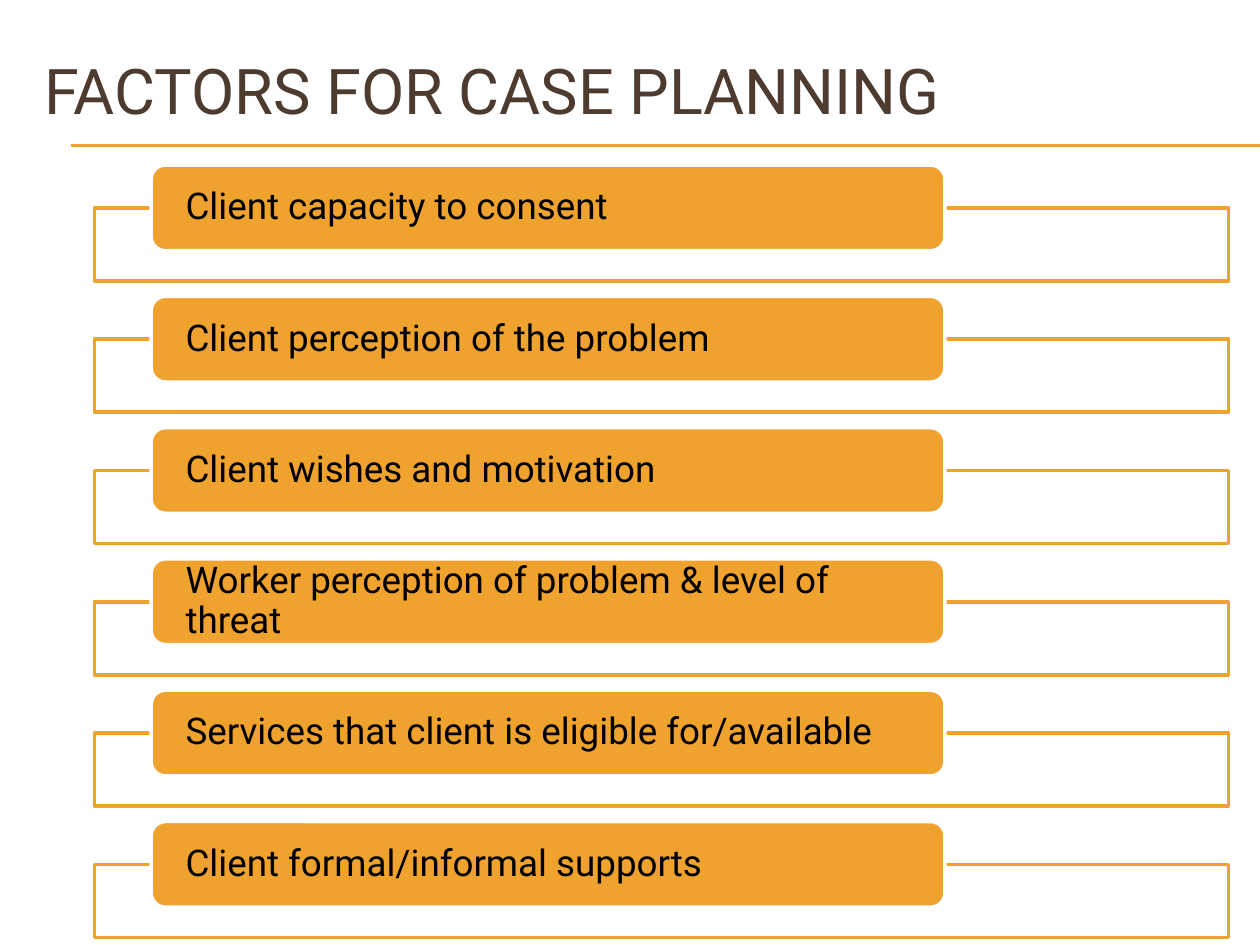
from dataclasses import dataclass

from lxml import etree
from pptx import Presentation
from pptx import util as u
from pptx.dml.color import RGBColor
from pptx.enum import shapes, text
from pptx.oxml import ns


@dataclass(frozen=True)
class Theme:
    """Hold the colours, font and type sizes."""
    accent: str = "F0A22E"
    paper: str = "FFFFFF"
    ink: str = "000000"
    heading: str = "4E3B30"
    font: str = "Roboto"
    title_size: int = 36
    label_size: int = 21


def write_text(frame, content, *, font, size, color, anchor, margins, line_spacing=1.0):
    """Fill a text frame with one left-aligned, formatted paragraph."""
    frame.word_wrap = True
    frame.auto_size = text.MSO_AUTO_SIZE.NONE
    frame.vertical_anchor = anchor
    frame.margin_left = frame.margin_right = u.Inches(margins[0])
    frame.margin_top = frame.margin_bottom = u.Inches(margins[1])
    paragraph = frame.paragraphs[0]
    paragraph.alignment = text.PP_ALIGN.LEFT
    paragraph.line_spacing = line_spacing
    run = paragraph.add_run()
    run.text = content
    run.font.name = font
    run.font.size = u.Pt(size)
    run.font.color.rgb = RGBColor.from_string(color)


class SlideBuilder:
    """Draw styled elements on the current slide."""

    def __init__(self, slide, theme):
        """Keep the slide and its theme."""
        self.slide = slide
        self.theme = theme

    def title(self, content, left, top, width, height):
        """Place and fill the title placeholder."""
        shape = self.slide.shapes.title
        shape.left, shape.top = u.Inches(left), u.Inches(top)
        shape.width, shape.height = u.Inches(width), u.Inches(height)
        write_text(shape.text_frame, content, font=self.theme.font,
                   size=self.theme.title_size, color=self.theme.heading,
                   anchor=text.MSO_ANCHOR.TOP, margins=(0.1, 0.08))

    def rule(self, left, right, y):
        """Draw a thin horizontal line."""
        line = self.slide.shapes.add_connector(
            shapes.MSO_CONNECTOR.STRAIGHT,
            u.Inches(left), u.Inches(y), u.Inches(right), u.Inches(y))
        line.line.color.rgb = RGBColor.from_string(self.theme.accent)
        line.line.width = u.Pt(0.75)
        etree.SubElement(line._element.spPr, ns.qn("a:effectLst"))

    def box(self, kind, left, top, width, height, fill, outline):
        """Draw a filled and outlined preset shape."""
        shape = self.slide.shapes.add_shape(
            kind, u.Inches(left), u.Inches(top), u.Inches(width), u.Inches(height))
        shape.shadow.inherit = False
        shape.fill.solid()
        shape.fill.fore_color.rgb = RGBColor.from_string(fill)
        shape.line.color.rgb = RGBColor.from_string(outline)
        shape.line.width = u.Pt(2)
        return shape

    def frame(self, left, top, width, height):
        """Draw an outlined box with a slightly transparent fill."""
        shape = self.box(shapes.MSO_SHAPE.RECTANGLE, left, top, width, height,
                         self.theme.paper, self.theme.accent)
        color = shape._element.spPr.find(ns.qn("a:solidFill"))[0]
        etree.SubElement(color, ns.qn("a:alpha"), val="90000")

    def label(self, content, left, top, width, height):
        """Draw a rounded label with its text."""
        shape = self.box(shapes.MSO_SHAPE.ROUNDED_RECTANGLE, left, top, width, height,
                         self.theme.accent, self.theme.paper)
        write_text(shape.text_frame, content, font=self.theme.font,
                   size=self.theme.label_size, color=self.theme.ink,
                   anchor=text.MSO_ANCHOR.MIDDLE, margins=(0.24, 0), line_spacing=0.9)


FACTORS = (
    "Client capacity to consent",
    "Client perception of the problem",
    "Client wishes and motivation",
    "Worker perception of problem & level of threat",
    "Services that client is eligible for/available",
    "Client formal/informal supports",
)
FIRST_TOP = 1.31
ROW_STEP = 1.042


def main():
    """Build and save the presentation."""
    presentation = Presentation()
    presentation.slide_width, presentation.slide_height = u.Inches(10), u.Inches(7.5)
    slide = presentation.slides.add_slide(presentation.slide_layouts.get_by_name("Title Only"))
    builder = SlideBuilder(slide, Theme())
    for y in (1.15, 1.16):
        builder.rule(0.56, 10, y)
    for row, factor in enumerate(FACTORS):
        top = FIRST_TOP + row * ROW_STEP
        builder.frame(0.75, top + 0.34, 9, 0.58)
        builder.label(factor, 1.2, top, 6.3, 0.68)
    builder.title("FACTORS FOR CASE PLANNING", 0.25, 0.33, 9.5, 0.92)
    presentation.save("out.pptx")


if __name__ == "__main__":
    main()
